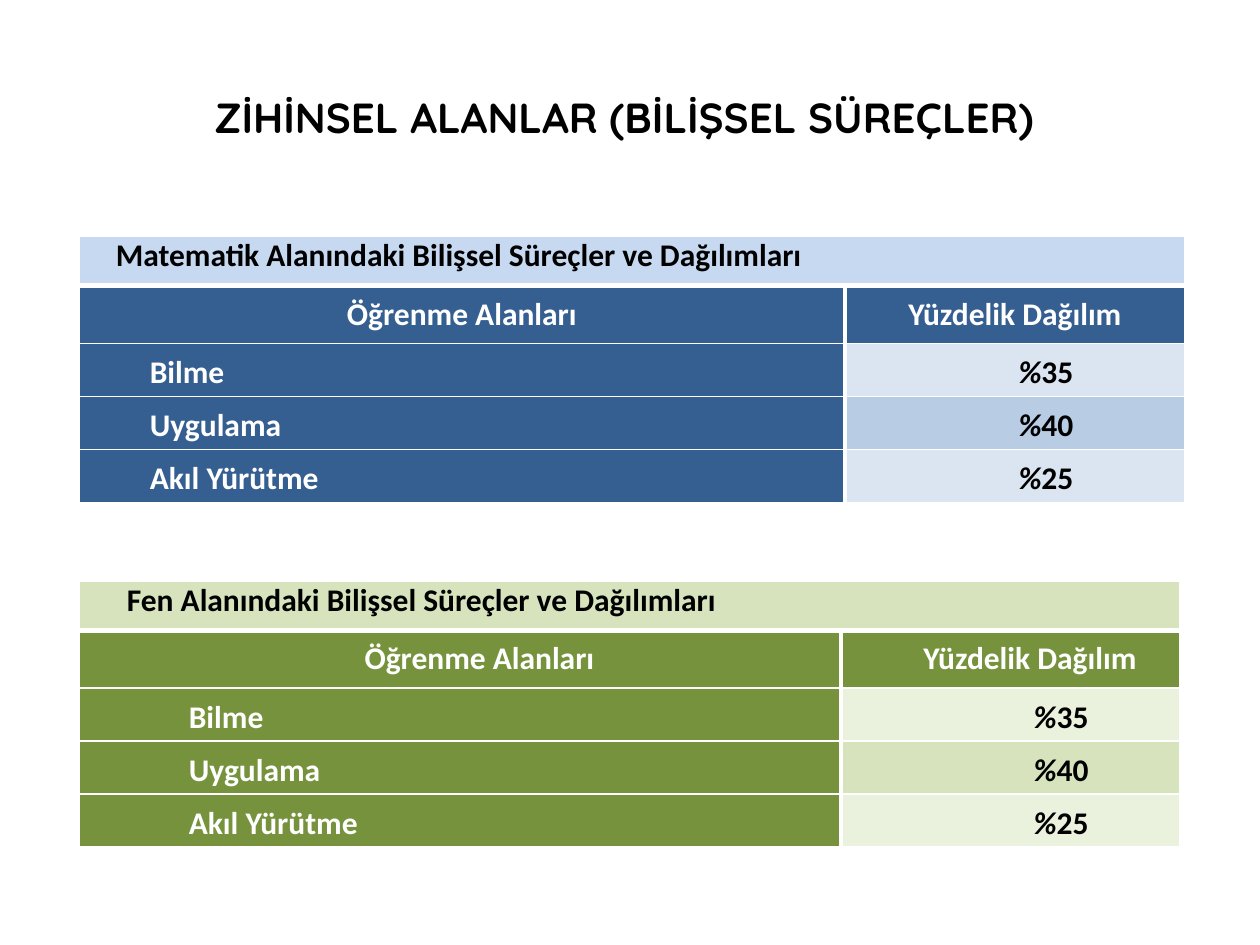
from lxml import etree
from pptx import Presentation
from pptx.dml.color import RGBColor
from pptx.enum import text
from pptx.oxml import ns
from pptx.util import Pt


def add_run(p, txt, size, font, color, italic=False):
    r = p.add_run()
    r.text = txt
    r.font.size = Pt(size)
    r.font.name = font
    r.font.bold = True
    r.font.italic = italic
    r.font.color.rgb = RGBColor.from_string(color)


def add_border(cell, side, width):
    tcPr = cell._tc.get_or_add_tcPr()
    ln = etree.SubElement(tcPr, ns.qn("a:ln" + side), w=str(Pt(width)))
    fill = etree.SubElement(ln, ns.qn("a:solidFill"))
    etree.SubElement(fill, ns.qn("a:srgbClr"), val="FFFFFF")


prs = Presentation()
prs.slide_width, prs.slide_height = Pt(720), Pt(540)
s = prs.slides.add_slide(prs.slide_layouts[6])

title = s.shapes.add_textbox(Pt(36), Pt(21.6), Pt(648), Pt(90))
tf = title.text_frame
tf.word_wrap = True
tf.vertical_anchor = text.MSO_ANCHOR.MIDDLE
p = tf.paragraphs[0]
p.alignment = text.PP_ALIGN.CENTER
add_run(p, "ZİHİNSEL ALANLAR (BİLİŞSEL SÜREÇLER) ", 24, "Quicksand", "000000")

LEFT, CENTER, JUSTIFY = text.PP_ALIGN.LEFT, text.PP_ALIGN.CENTER, text.PP_ALIGN.JUSTIFY
heights = [28.2, 33, 30.3, 30.3, 30.3]
areas = [("Bilme", "35"), ("Uygulama", "40"), ("Akıl Yürütme", "25")]
tables = [
    ("Matematik", 135, (437.8, 194.4), "C6D9F1", "365F91", ("DBE5F1", "B8CCE4"), LEFT, 16, 0),
    ("Fen", 332, (435.6, 193.7), "D6E3BC", "76923C", ("EAF1DD", "D6E3BC"), JUSTIFY, 22.3, 22.3),
]

for subject, top, widths, caption, dark, bands, align, caption_indent, indent in tables:
    frame = s.shapes.add_table(5, 2, Pt(45), Pt(top), Pt(sum(widths)), Pt(sum(heights)))
    tbl = frame.table
    for col, width in zip(tbl.columns, widths):
        col.width = Pt(width)
    for row, height in zip(tbl.rows, heights):
        row.height = Pt(height)
    tbl.cell(0, 0).merge(tbl.cell(0, 1))

    rows = [(f"{subject} Alanındaki Bilişsel Süreçler ve Dağılımları", ""),
            ("Öğrenme Alanları", "Yüzdelik Dağılım")] + areas
    for i, row in enumerate(rows):
        for j, txt in enumerate(row):
            cell = tbl.cell(i, j)
            cell.margin_left = cell.margin_right = Pt(5.2)
            cell.margin_top = cell.margin_bottom = 0
            cell.vertical_anchor = text.MSO_ANCHOR.MIDDLE if i else text.MSO_ANCHOR.TOP

            add_border(cell, "L", 3 if i and j else 1)
            add_border(cell, "R", 3 if i and not j else 1)
            add_border(cell, "T", 3 if i == 1 else 1)
            add_border(cell, "B", 3 if i == 0 else 1)

            is_value = i > 1 and j == 1
            color = caption if i == 0 else bands[i % 2] if is_value else dark
            cell.fill.solid()
            cell.fill.fore_color.rgb = RGBColor.from_string(color)
            if not txt:
                continue

            p = cell.text_frame.paragraphs[0]
            p.alignment = CENTER if i == 1 or is_value else align
            pPr = p._p.get_or_add_pPr()
            pPr.set("marL", str(Pt(35.4 if i > 1 else 0)))
            pPr.set("indent", str(Pt(indent if i else caption_indent)))
            if i > 1:
                p.line_spacing = 1.15
            ink = "000000" if i == 0 or is_value else "FFFFFF"
            if is_value:
                add_run(p, "%", 18, "Calibri", ink, True)
            add_run(p, txt, 18, "Calibri", ink)

prs.save("out.pptx")
